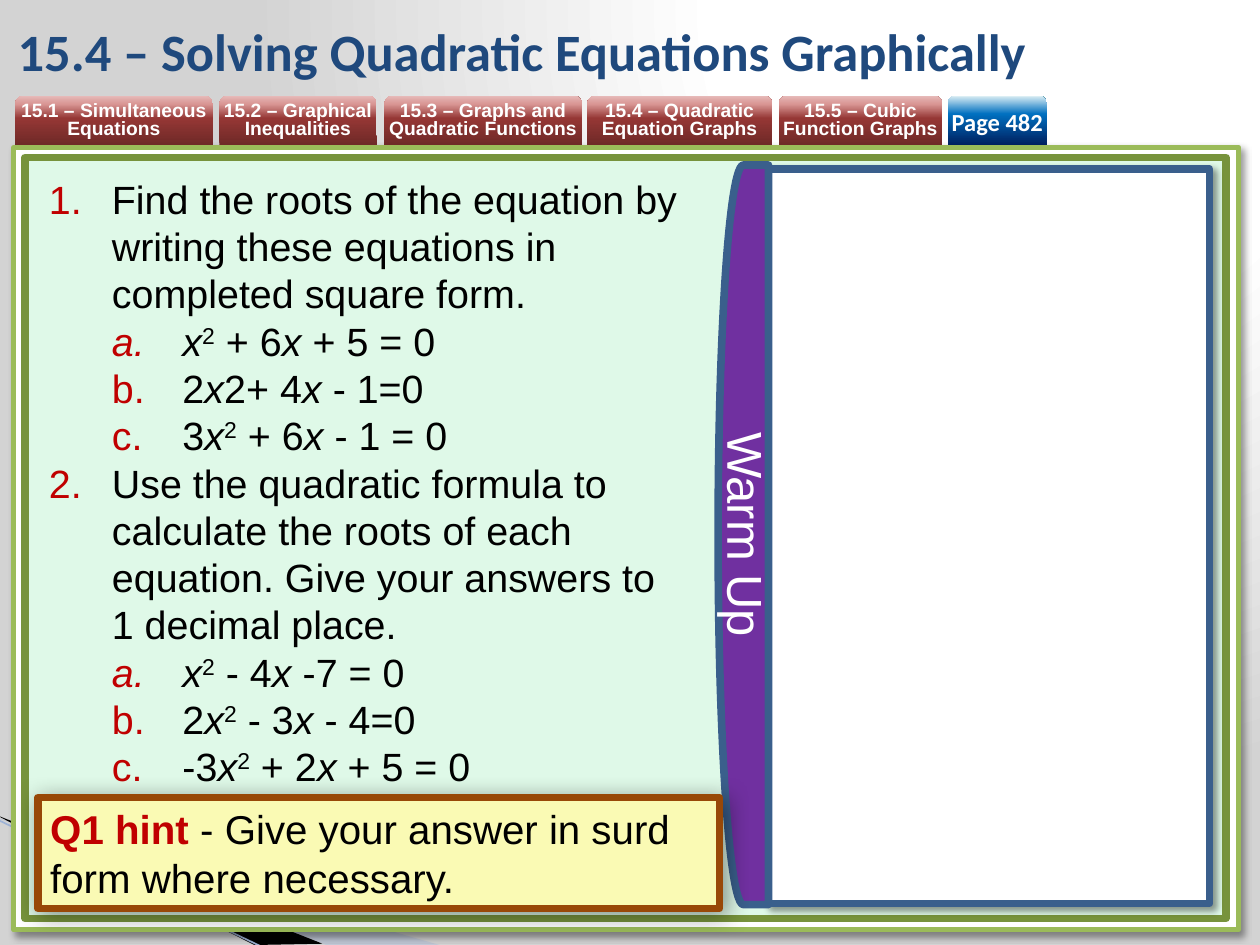
from itertools import groupby

from lxml.etree import SubElement
from pptx import Presentation
from pptx.dml.color import RGBColor
from pptx.enum.shapes import MSO_CONNECTOR, MSO_SHAPE
from pptx.enum.text import MSO_ANCHOR, PP_ALIGN
from pptx.oxml.ns import qn
from pptx.util import Inches, Pt

WHITE = RGBColor(0xFF, 0xFF, 0xFF)
BLACK = RGBColor(0x00, 0x00, 0x00)
PALE_BLUE = RGBColor(0xA7, 0xB9, 0xDB)
SOFT_BLUE = RGBColor(0x9E, 0xB3, 0xD6)
STEEL_BLUE = RGBColor(0x3A, 0x5F, 0x8C)
NAVY = RGBColor(0x1F, 0x49, 0x7D)
LIGHT_GREEN = RGBColor(0x9B, 0xBB, 0x59)
DARK_GREEN = RGBColor(0x77, 0x93, 0x3C)
MINT = RGBColor(0xDF, 0xF9, 0xE8)
PURPLE = RGBColor(0x70, 0x30, 0xA0)
CREAM = RGBColor(0xFA, 0xFA, 0xB4)
BROWN = RGBColor(0x98, 0x48, 0x07)
RED = RGBColor(0xC0, 0x00, 0x00)

BACKGROUND_STOPS = [(0, "FFFFFF"), (40, "FFFFFF"), (100, "D3D3D3")]
RED_STOPS = [(0, "6F2927"), (54, "953735"), (83, "D99694"), (100, "E6B9B8")]
BLUE_STOPS = [(0, "002060"), (63, "0070C0"), (100, "DBEEF4")]


def set_stops(gradient, stops):
    stop_list = gradient.find(qn("a:gsLst"))
    for old_stop in list(stop_list):
        stop_list.remove(old_stop)
    for position, color in stops:
        stop = SubElement(stop_list, qn("a:gs"), pos=str(position * 1000))
        SubElement(stop, qn("a:srgbClr"), val=color)


def add_box(kind, left, top, width, height, fill, line, line_width, shadow=None):
    shape = slide.shapes.add_shape(
        kind, Inches(left), Inches(top), Inches(width), Inches(height))
    shape.shadow.inherit = False
    shape.fill.solid()
    shape.fill.fore_color.rgb = fill
    shape.line.color.rgb = line
    shape.line.width = Pt(line_width)
    if shadow:
        effects = shape._element.spPr.find(qn("a:effectLst"))
        outer = SubElement(effects, qn("a:outerShdw"), blurRad=str(Pt(shadow)),
                           dist=str(Pt(3)), dir="2700000", algn="tl", rotWithShape="0")
        color = SubElement(outer, qn("a:srgbClr"), val="000000")
        SubElement(color, qn("a:alpha"), val="40000")
    return shape


presentation = Presentation()
presentation.slide_width = Inches(10)
presentation.slide_height = Inches(7.5)
slide = presentation.slides.add_slide(presentation.slide_layouts[5])

slide.background.fill.gradient()
gradient = slide._element.find(".//" + qn("a:gradFill"))
set_stops(gradient, BACKGROUND_STOPS)
gradient.remove(gradient.find(qn("a:lin")))
path = SubElement(gradient, qn("a:path"))
path.set("path", "circle")
SubElement(path, qn("a:fillToRect"), l="65000", b="98000")

title = slide.shapes.title
title.left, title.top = Inches(0.04), Inches(0.05)
title.width, title.height = Inches(8.27), Inches(0.71)
title.text_frame.text = "15.4 – Solving Quadratic Equations Graphically"
title.text_frame.vertical_anchor = MSO_ANCHOR.MIDDLE
paragraph = title.text_frame.paragraphs[0]
paragraph.alignment = PP_ALIGN.LEFT
paragraph.font.name = "Calibri"
paragraph.font.size = Pt(30)
paragraph.font.bold = True
paragraph.font.color.rgb = NAVY

swooshes = [
    (PALE_BLUE, 40, [(-0.01, 6.5), (3.49, 7.5), (2.59, 7.5), (-0.01, 6.49)]),
    (BLACK, 100, [(0, 6.48), (2.56, 7.49), (2.02, 7.5), (0.01, 6.49)]),
]
for color, opacity, points in swooshes:
    corners = [(Inches(x), Inches(y)) for x, y in points]
    builder = slide.shapes.build_freeform(*corners[0])
    builder.add_line_segments(corners[1:], close=True)
    swoosh = builder.convert_to_shape()
    swoosh.shadow.inherit = False
    swoosh.fill.solid()
    swoosh.fill.fore_color.rgb = color
    swoosh.line.fill.background()
    if opacity < 100:
        fill_color = swoosh._element.spPr.find(".//" + qn("a:srgbClr"))
        SubElement(fill_color, qn("a:alpha"), val=str(opacity * 1000))

edge = slide.shapes.add_connector(
    MSO_CONNECTOR.STRAIGHT, Inches(-0.01), Inches(6.51), Inches(2.09), Inches(7.52))
edge.line.color.rgb = SOFT_BLUE
edge.line.width = Pt(0.95)
SubElement(edge._element.spPr, qn("a:effectLst"))

add_box(MSO_SHAPE.RECTANGLE, 0.11, 1.17, 9.72, 6.21, WHITE, LIGHT_GREEN, 3, shadow=4)
add_box(MSO_SHAPE.RECTANGLE, 0.2, 1.25, 9.53, 6.04, MINT, DARK_GREEN, 4.33)
add_box(MSO_SHAPE.RECTANGLE, 6.1, 1.34, 3.5, 5.83, WHITE, STEEL_BLUE, 4.33, shadow=4)

tabs = [
    (0.12, 1.57, "15.1 – Simultaneous Equations"),
    (1.74, 1.25, "15.2 – Graphical Inequalities"),
    (3.05, 1.57, "15.3 – Graphs and Quadratic Functions"),
    (4.66, 1.47, "15.4 – Quadratic Equation Graphs"),
    (6.18, 1.3, "15.5 – Cubic Function Graphs"),
    (7.52, 0.79, "Page 482"),
]
for left, width, label in tabs:
    is_page = label.startswith("Page")
    tab = slide.shapes.add_shape(
        MSO_SHAPE.ROUND_2_SAME_RECTANGLE, Inches(left), Inches(0.76), Inches(width), Inches(0.39))
    tab.shadow.inherit = False
    tab.line.fill.background()
    tab.fill.gradient()
    tab.fill.gradient_angle = 90
    set_stops(tab._element.spPr.find(qn("a:gradFill")), BLUE_STOPS if is_page else RED_STOPS)
    frame = tab.text_frame
    frame.margin_left = frame.margin_right = frame.margin_top = frame.margin_bottom = 0
    frame.vertical_anchor = MSO_ANCHOR.MIDDLE
    frame.text = label
    paragraph = frame.paragraphs[0]
    paragraph.alignment = PP_ALIGN.CENTER
    paragraph.font.name = "Calibri" if is_page else "Arial"
    paragraph.font.size = Pt(14 if is_page else 11)
    paragraph.font.bold = True
    paragraph.font.color.rgb = WHITE
    if not is_page:
        paragraph.line_spacing = Pt(10)

questions = [
    (0, "Find the roots of the equation by writing these equations in completed square form."),
    (1, "x² + 6x + 5 = 0"),
    (1, "2x2+ 4x - 1=0"),
    (1, "3x² + 6x - 1 = 0"),
    (0, "Use the quadratic formula to calculate the roots of each equation. "
        "Give your answers to 1 decimal place."),
    (1, "x² - 4x -7 = 0"),
    (1, "2x² - 3x - 4=0"),
    (1, "-3x² + 2x + 5 = 0"),
]
INDENTS = [(0.5, -0.5, "arabicPeriod"), (1.06, -0.56, "alphaLcPeriod")]
question_box = slide.shapes.add_textbox(Inches(0.29), Inches(1.34), Inches(5.26), Inches(5.13))
frame = question_box.text_frame
frame.word_wrap = True
for index, (level, text) in enumerate(questions):
    paragraph = frame.paragraphs[0] if index == 0 else frame.add_paragraph()
    paragraph.level = level
    paragraph.line_spacing = Pt(27)
    margin, indent, numbering = INDENTS[level]
    properties = paragraph._p.get_or_add_pPr()
    properties.set("marL", str(Inches(margin)))
    properties.set("indent", str(Inches(indent)))
    bullet_color = SubElement(properties, qn("a:buClr"))
    SubElement(bullet_color, qn("a:srgbClr"), val=str(RED))
    SubElement(properties, qn("a:buFont"), typeface="+mj-lt")
    SubElement(properties, qn("a:buAutoNum"), type=numbering)
    tab_list = SubElement(properties, qn("a:tabLst"))
    for stop in (0.88, 2.94):
        SubElement(tab_list, qn("a:tab"), pos=str(Inches(stop)), algn="l")
    paragraph.font.name = "Arial"
    paragraph.font.size = Pt(22.5)
    paragraph.font.color.rgb = BLACK
    if level == 0:
        paragraph.add_run().text = text
        continue
    for kind, characters in groupby(text, key=lambda c: c if c in "x²" else ""):
        run = paragraph.add_run()
        run.text = "".join(characters).replace("²", "2")
        if kind == "x":
            run.font.italic = True
        elif kind == "²":
            run.font._element.set("baseline", "30000")

warm_up = add_box(MSO_SHAPE.FLOWCHART_DELAY, 5.7, 1.31, 0.4, 5.87, PURPLE, STEEL_BLUE, 4.33)
warm_up._element.spPr.find(qn("a:xfrm")).set("flipH", "1")
frame = warm_up.text_frame
frame._txBody.bodyPr.set("vert", "vert")
frame.vertical_anchor = MSO_ANCHOR.MIDDLE
frame.text = "Warm Up"
paragraph = frame.paragraphs[0]
paragraph.alignment = PP_ALIGN.CENTER
paragraph.font.name = "Arial"
paragraph.font.size = Pt(28)
paragraph.font.color.rgb = WHITE

hint = add_box(MSO_SHAPE.RECTANGLE, 0.3, 6.33, 5.41, 0.88, CREAM, BROWN, 4.33, shadow=13)
hint.text_frame.vertical_anchor = MSO_ANCHOR.MIDDLE
paragraph = hint.text_frame.paragraphs[0]
paragraph.alignment = PP_ALIGN.LEFT
paragraph.font.name = "Arial"
paragraph.font.size = Pt(23)
for text, color, bold in [("Q1 hint", RED, True),
                          (" - Give your answer in surd form where necessary.", BLACK, False)]:
    run = paragraph.add_run()
    run.text = text
    run.font.bold = bold
    run.font.color.rgb = color

presentation.save("out.pptx")
